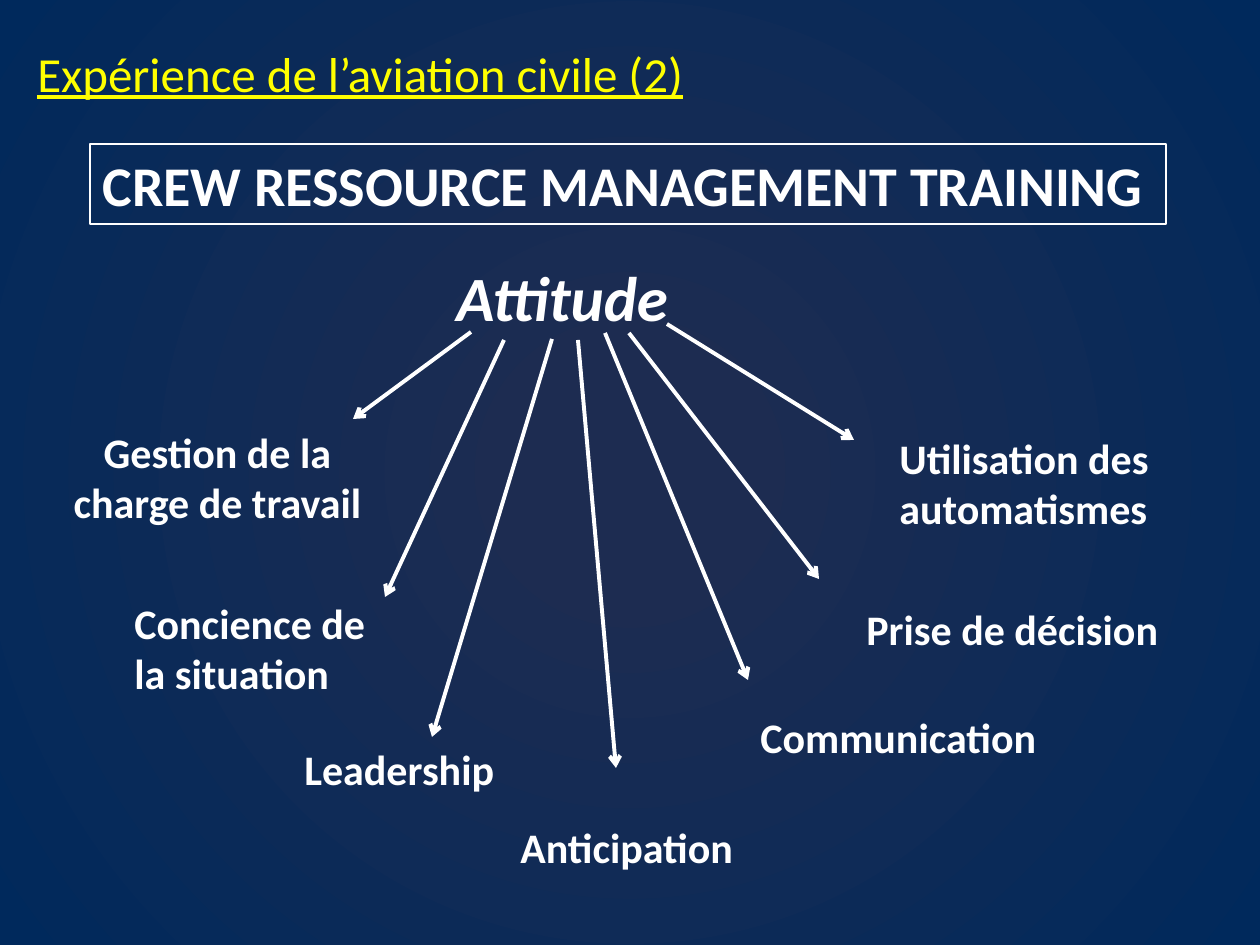
from lxml import etree
from pptx import Presentation
from pptx import util as u
from pptx.dml.color import RGBColor
from pptx.enum import shapes, text
from pptx.oxml.ns import qn

PX = 914400 / 126
COLORS = {"text": "FFFFFF", "title": "FFFF00", "center": "1D2C51", "edge": "00295C"}


def px(*lengths):
    return [u.Emu(round(length * PX)) for length in lengths]


def write(shape, lines, size, color="text", bold=True, align=text.PP_ALIGN.LEFT):
    frame = shape.text_frame
    frame.word_wrap = True
    frame.text = lines
    for paragraph in frame.paragraphs:
        paragraph.alignment = align
        font = paragraph.runs[0].font
        font.name = "Calibri"
        font.size = u.Pt(size)
        font.bold = bold
        font.color.rgb = RGBColor.from_string(COLORS[color])
    return frame.paragraphs[0].runs[0].font


presentation = Presentation()
presentation.slide_width, presentation.slide_height = px(1260, 945)
slide = presentation.slides.add_slide(presentation.slide_layouts[6])

# Background: circular gradient from the centre
fill = slide.background.fill
fill.gradient()
for stop, position, color in zip(fill.gradient_stops, (0.14, 1), ("center", "edge")):
    stop.position = position
    stop.color.rgb = RGBColor.from_string(COLORS[color])
linear = slide.element.find(".//" + qn("a:lin"))
circle = etree.Element(qn("a:path"), path="circle")
etree.SubElement(circle, qn("a:fillToRect"), l="50000", t="50000", r="50000", b="50000")
linear.getparent().replace(linear, circle)

# Headings
title = slide.shapes.add_textbox(*px(25, 37, 678, 72))
write(title, "Expérience de l’aviation civile (2)", 28, "title", bold=False).underline = True

banner = slide.shapes.add_shape(shapes.MSO_SHAPE.RECTANGLE, *px(90, 144, 1076, 80))
banner.shadow.inherit = False
banner.fill.background()
banner.line.color.rgb = RGBColor.from_string(COLORS["text"])
banner.line.width = u.Pt(1)
write(banner, "CREW RESSOURCE MANAGEMENT TRAINING", 32)

attitude = slide.shapes.add_textbox(*px(444, 252, 256, 89))
write(attitude, "Attitude", 36).italic = True

# Skills: wording, box, arrow start, arrow end
left, center = text.PP_ALIGN.LEFT, text.PP_ALIGN.CENTER
skills = [
    ("Gestion de la charge de travail", center, (34, 420, 367, 115), (471, 332), (353, 419)),
    ("Concience de\nla situation", left, (122, 591, 268, 115), (504, 340), (385, 597)),
    ("Leadership", left, (292, 737, 217, 63), (552, 339), (432, 737)),
    ("Anticipation", left, (508, 815, 241, 63), (578, 340), (616, 768)),
    ("Communication", left, (748, 705, 304, 63), (605, 333), (748, 680)),
    ("Prise de décision", left, (854, 597, 320, 63), (629, 333), (819, 579)),
    ("Utilisation des\nautomatismes", left, (887, 426, 287, 115), (667, 324), (854, 440)),
]
for wording, align, box, start, end in skills:
    label = slide.shapes.add_textbox(*px(*box))
    write(label, wording, 24, align=align)

    arrow = slide.shapes.add_connector(shapes.MSO_CONNECTOR.STRAIGHT, *px(*start, *end))
    arrow.line.color.rgb = RGBColor.from_string(COLORS["text"])
    arrow.line.width = u.Pt(2.25)
    etree.SubElement(arrow.line._get_or_add_ln(), qn("a:tailEnd"), type="arrow")
    etree.SubElement(arrow._element.spPr, qn("a:effectLst"))

presentation.save("out.pptx")
